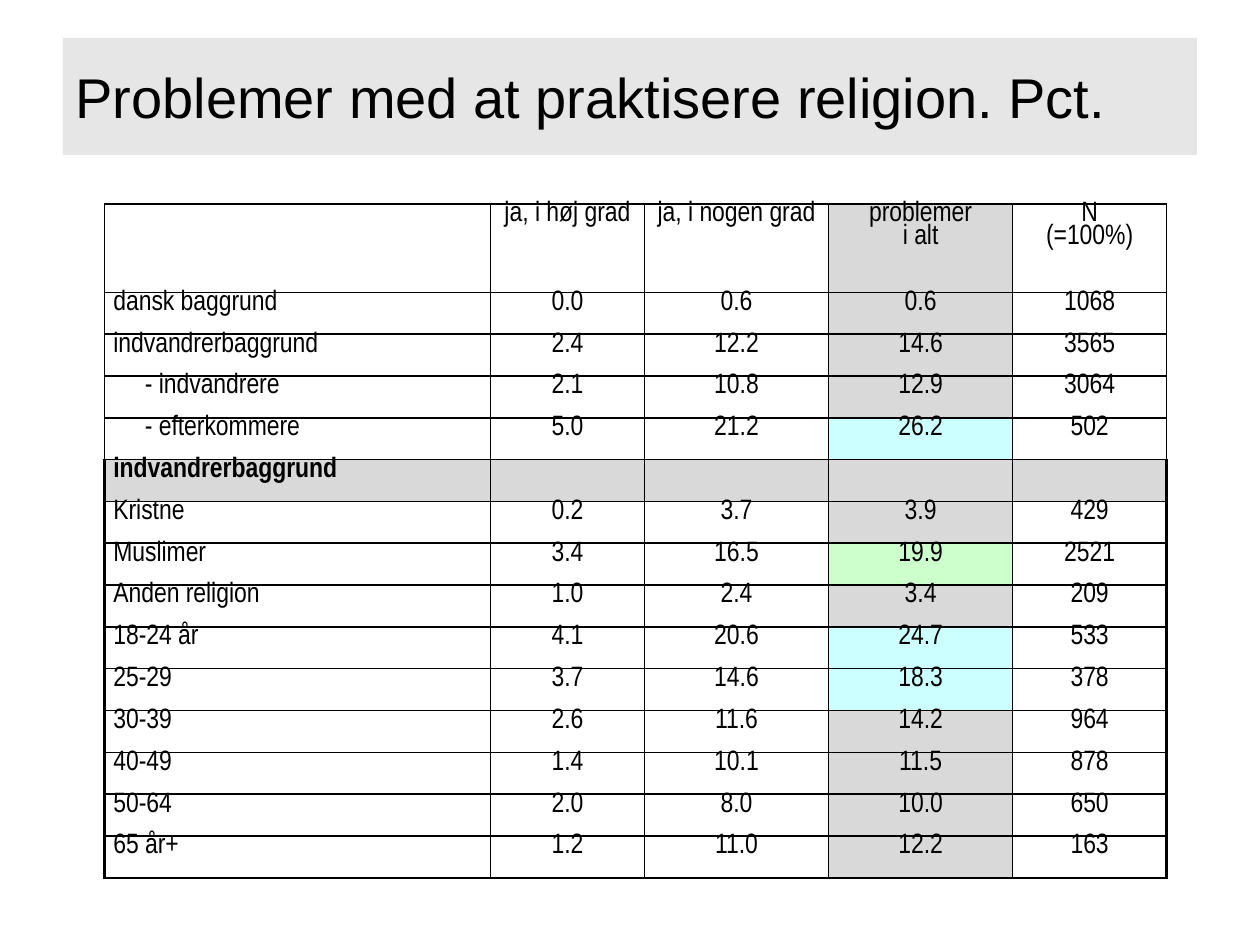
"""Build a slide with a table of problems practising religion."""
from dataclasses import dataclass

from lxml import etree
from pptx import Presentation
from pptx.dml.color import RGBColor
from pptx.enum import shapes, text
from pptx.oxml import ns
from pptx.util import Inches, Pt


@dataclass(frozen=True)
class Theme:
    """Colours, fonts and sizes of the slide."""
    ink: str = "000000"
    banner: str = "E6E6E6"
    grey: str = "D9D9D9"
    cyan: str = "CCFFFF"
    green: str = "CCFFCC"
    title_font: str = "Arial"
    title_size: int = 32
    table_font: str = "Arial Narrow"
    table_size: int = 16
    thin: float = 1
    thick: float = 1.5


THEME = Theme()
TITLE = "Problemer med at praktisere religion. Pct."
ROWS = [
    ("", "ja, i høj grad", "ja, i nogen grad", "problemer\ni alt", "N\n(=100%)"),
    ("dansk baggrund", "0.0", "0.6", "0.6", "1068"),
    ("indvandrerbaggrund", "2.4", "12.2", "14.6", "3565"),
    ("- indvandrere", "2.1", "10.8", "12.9", "3064"),
    ("- efterkommere", "5.0", "21.2", "26.2", "502"),
    ("indvandrerbaggrund", "", "", "", ""),
    ("Kristne", "0.2", "3.7", "3.9", "429"),
    ("Muslimer", "3.4", "16.5", "19.9", "2521"),
    ("Anden religion", "1.0", "2.4", "3.4", "209"),
    ("18-24 år", "4.1", "20.6", "24.7", "533"),
    ("25-29", "3.7", "14.6", "18.3", "378"),
    ("30-39", "2.6", "11.6", "14.2", "964"),
    ("40-49", "1.4", "10.1", "11.5", "878"),
    ("50-64", "2.0", "8.0", "10.0", "650"),
    ("65 år+", "1.2", "11.0", "12.2", "163"),
]
COLUMN_WIDTHS = (3.06, 1.22, 1.46, 1.46, 1.22)
HEADER_HEIGHT = 0.7
SECTION_ROW = 5
TOTAL_COLUMN = 3
HIGHLIGHTS = {4: THEME.cyan, 7: THEME.green, 9: THEME.cyan, 10: THEME.cyan}


def style_font(font, name, size, bold=False):
    """Apply typeface, size, weight and ink colour."""
    font.name, font.size, font.bold = name, Pt(size), bold
    font.color.rgb = RGBColor.from_string(THEME.ink)


def add_title(slide, left, top, width, height):
    """Place the title banner in the given box."""
    banner = slide.shapes.add_shape(
        shapes.MSO_SHAPE.RECTANGLE,
        Inches(left), Inches(top), Inches(width), Inches(height))
    banner.shadow.inherit = False
    banner.fill.solid()
    banner.fill.fore_color.rgb = RGBColor.from_string(THEME.banner)
    banner.line.fill.background()
    frame = banner.text_frame
    frame.word_wrap = True
    frame.vertical_anchor = text.MSO_ANCHOR.MIDDLE
    heading = frame.paragraphs[0]
    heading.text = TITLE
    heading.alignment = text.PP_ALIGN.LEFT
    style_font(heading.font, THEME.title_font, THEME.title_size)


def set_borders(cell, widths):
    """Draw left, right, top and bottom borders, ahead of the cell fill."""
    properties = cell._tc.get_or_add_tcPr()
    for position, (side, width) in enumerate(zip("LRTB", widths)):
        border = etree.Element(ns.qn(f"a:ln{side}"), w=str(Pt(width)))
        solid = etree.SubElement(border, ns.qn("a:solidFill"))
        etree.SubElement(solid, ns.qn("a:srgbClr"), val=THEME.ink)
        properties.insert(position, border)


def border_widths(row, column):
    """Return the four border widths, thicker on the lower part's outside."""
    lower = row >= SECTION_ROW
    heavy = (lower and column == 0,
             lower and column == len(COLUMN_WIDTHS) - 1,
             False,
             row == len(ROWS) - 1)
    return [THEME.thick if edge else THEME.thin for edge in heavy]


def fill_cell(cell, row, column):
    """Write and style one table cell."""
    cell.margin_left = cell.margin_right = Inches(0.07)
    cell.margin_top = cell.margin_bottom = 0
    cell.text = ROWS[row][column]
    for line in cell.text_frame.paragraphs:
        line.alignment = text.PP_ALIGN.CENTER if column else text.PP_ALIGN.LEFT
        line.line_spacing = 0.85
        style_font(line.font, THEME.table_font, THEME.table_size,
                   row == SECTION_ROW)
        if line.text.startswith("- "):
            line._p.get_or_add_pPr().set("marL", str(Inches(0.25)))
    shade = THEME.grey if row == SECTION_ROW else None
    if column == TOTAL_COLUMN:
        shade = HIGHLIGHTS.get(row, THEME.grey)
    if shade:
        cell.fill.solid()
        cell.fill.fore_color.rgb = RGBColor.from_string(shade)
    else:
        cell.fill.background()
    set_borders(cell, border_widths(row, column))


def add_results(slide, left, top, width, height):
    """Place the results table in the given box."""
    results = slide.shapes.add_table(
        len(ROWS), len(COLUMN_WIDTHS),
        Inches(left), Inches(top), Inches(width), Inches(height)).table
    results.first_row = results.horz_banding = False
    scale = width / sum(COLUMN_WIDTHS)
    for column, share in zip(results.columns, COLUMN_WIDTHS):
        column.width = Inches(share * scale)
    body_height = (height - HEADER_HEIGHT) / (len(ROWS) - 1)
    for row, line in enumerate(results.rows):
        line.height = Inches(body_height if row else HEADER_HEIGHT)
        for column, cell in enumerate(line.cells):
            fill_cell(cell, row, column)


def main():
    """Build and save the presentation."""
    deck = Presentation()
    deck.slide_width, deck.slide_height = Inches(10), Inches(7.5)
    slide = deck.slides.add_slide(deck.slide_layouts[6])
    add_title(slide, 0.5, 0.3, 9, 0.93)
    add_results(slide, 0.83, 1.62, 8.43, 5.35)
    deck.save("out.pptx")


if __name__ == "__main__":
    main()
